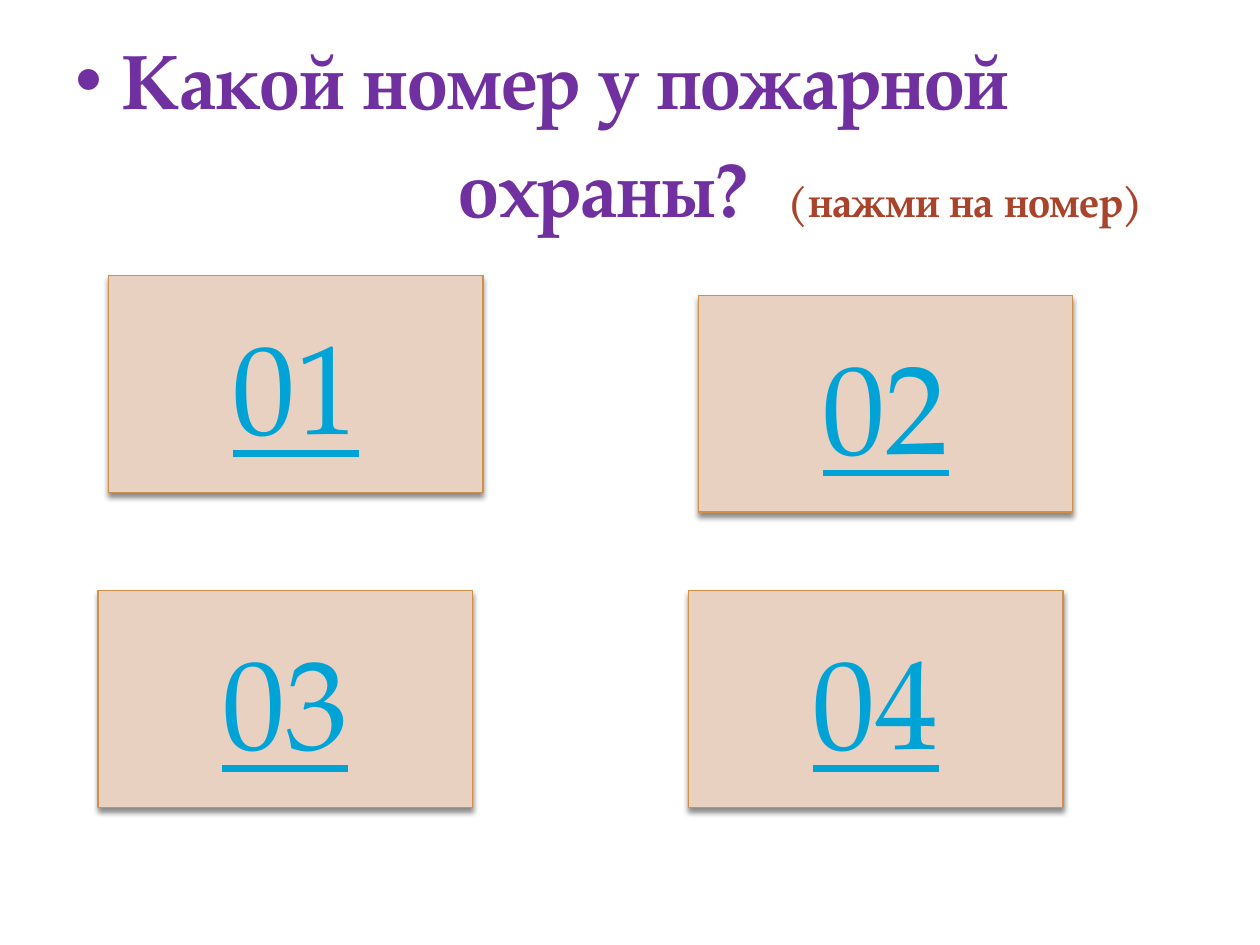
"""Builds a quiz slide asking for the fire service phone number."""
from lxml import etree
from pptx import Presentation
from pptx.dml.color import RGBColor as RGB
from pptx.enum.shapes import MSO_SHAPE as SHAPE
from pptx.enum.text import MSO_ANCHOR as ANCHOR, MSO_AUTO_SIZE as AUTO, PP_ALIGN as ALIGN
from pptx.oxml import parse_xml
from pptx.oxml.ns import nsdecls, qn
from pptx.util import Pt

FONT = "TeX Gyre Pagella"
PURPLE = RGB(0x70, 0x30, 0xA0)
RUST = RGB(0xA9, 0x43, 0x2B)
BLUE = RGB(0x00, 0xA3, 0xD6)
SAND = RGB(0xE9, 0xD1, 0xC1)
OCHRE = RGB(0xD1, 0x90, 0x49)

QUESTION = {"name": FONT, "size": Pt(44), "bold": True}
HINT = {"name": FONT, "size": Pt(24), "bold": True}
NUMBER = {"name": FONT, "size": Pt(72), "underline": True}
SHADOW = (
    f'<a:outerShdw {nsdecls("a")} blurRad="{Pt(3)}" dist="{Pt(2.4)}" dir="5400000" '
    'algn="t" rotWithShape="0"><a:srgbClr val="000000"><a:alpha val="45000"/>'
    "</a:srgbClr></a:outerShdw>"
)


def add_run(p, text, style, color):
    r = p.add_run()
    r.text = text
    for name, value in style.items():
        setattr(r.font, name, value)
    r.font.color.rgb = color
    return r


prs = Presentation()
prs.slide_width, prs.slide_height = Pt(720), Pt(540)
s = prs.slides.add_slide(prs.slide_layouts[1])
title = s.shapes.title
title.element.getparent().remove(title.element)

body = s.placeholders[1]
body.left, body.top, body.width, body.height = Pt(36), Pt(15), Pt(684), Pt(469)
tf = body.text_frame
tf.word_wrap = True
tf.auto_size = AUTO.NONE
p = tf.paragraphs[0]
p.space_before = Pt(0)
add_run(p, "Какой номер у пожарной", QUESTION, PURPLE)

p = tf.add_paragraph()
p.space_before = Pt(8.8)
pPr = p._p.get_or_add_pPr()
pPr.set("marL", str(Pt(219)))
pPr.set("indent", "0")
etree.SubElement(pPr, qn("a:buNone"))
add_run(p, "охраны?", QUESTION, PURPLE)
gap = add_run(p, " ", QUESTION, PURPLE)
gap._r.get_or_add_rPr().set("spc", "1100")
add_run(p, "(нажми на номер)", HINT, RUST)

buttons = [("01", 62, 157.5), ("04", 393.5, 337.5), ("02", 399, 168.75), ("03", 56, 337.5)]
for number, left, top in buttons:
    sp = s.shapes.add_shape(SHAPE.RECTANGLE, Pt(left), Pt(top), Pt(214), Pt(124))
    sp.fill.solid()
    sp.fill.fore_color.rgb = SAND
    sp.line.color.rgb = OCHRE
    sp.line.width = Pt(0.79)
    sp.shadow.inherit = False
    sp._element.spPr.find(qn("a:effectLst")).append(parse_xml(SHADOW))
    tf = sp.text_frame
    tf.vertical_anchor = ANCHOR.MIDDLE
    p = tf.paragraphs[0]
    p.alignment = ALIGN.CENTER
    add_run(p, number, NUMBER, BLUE)

prs.save("out.pptx")
